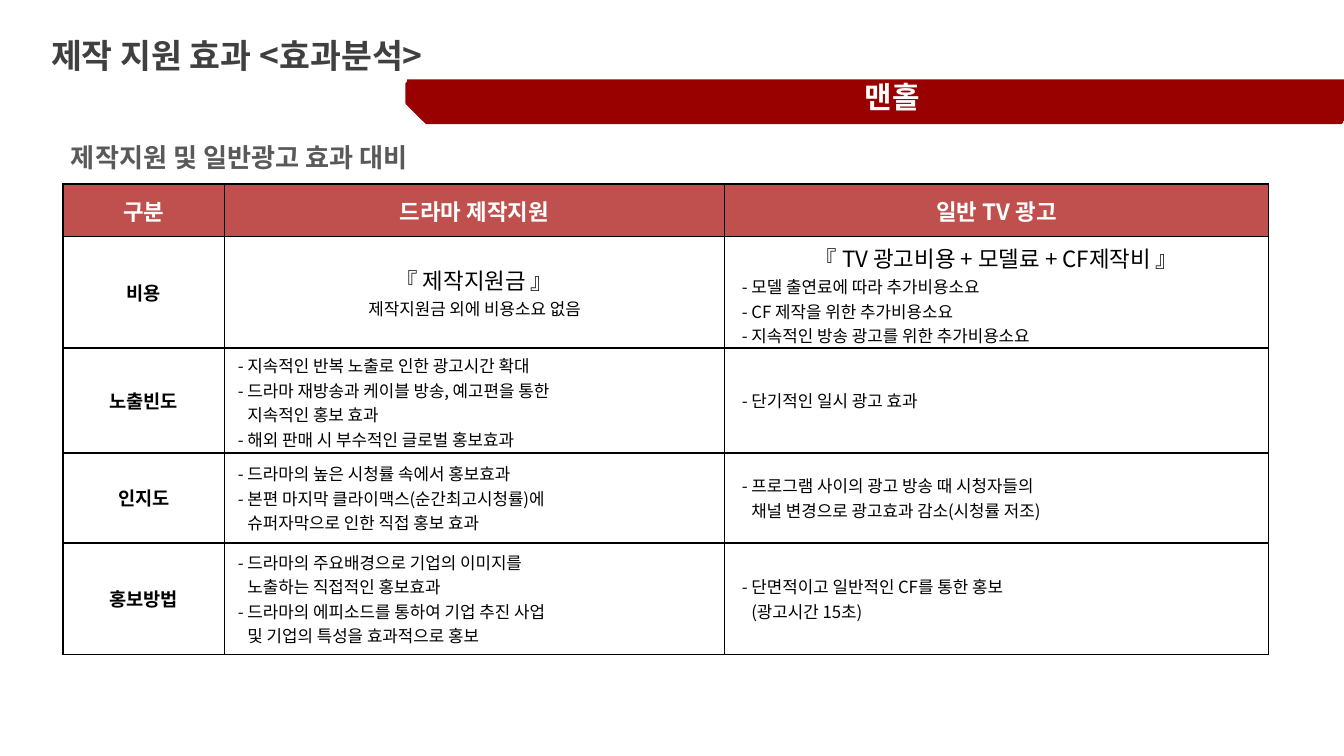
from dataclasses import dataclass

from lxml.etree import SubElement
from pptx import Presentation
from pptx.dml.color import RGBColor
from pptx.enum.shapes import MSO_SHAPE as Shape
from pptx.enum.text import MSO_ANCHOR as Anchor, MSO_AUTO_SIZE as AutoSize, PP_ALIGN as Align
from pptx.oxml import parse_xml
from pptx.oxml.ns import nsdecls, qn
from pptx.util import Inches, Pt


@dataclass(frozen=True)
class Theme:
    korean: str = "Noto Sans CJK KR"
    latin: str = "Arial"
    title: str = "404040"
    subtitle: str = "595959"
    banner: str = "990000"
    header: str = "C0504D"
    white: str = "FFFFFF"
    black: str = "000000"
    title_size: int = 18
    banner_size: int = 16
    subtitle_size: int = 14
    head_size: int = 12
    label_size: int = 10
    body_size: int = 9


theme = Theme()
deck = Presentation()
deck.slide_width, deck.slide_height = Inches(10), Inches(5.625)
slide = deck.slides.add_slide(deck.slide_layouts[5])


def area(left, top, width, height):
    """Turn percentages of the slide into lengths."""
    across, down = deck.slide_width / 100, deck.slide_height / 100
    return int(left * across), int(top * down), int(width * across), int(height * down)


def write(paragraph, text, size, color, bold=False, align=Align.LEFT, face=theme.korean):
    paragraph.alignment = align
    run = paragraph.add_run()
    run.text = text
    run.font.size, run.font.bold = Pt(size), bold
    run.font.color.rgb = RGBColor.from_string(color)
    run.font.name = face
    SubElement(run.font._element, qn("a:ea")).set("typeface", theme.korean)


# Banner: a bar with its lower left corner cut, over an outlined one
for place, outlined in (((30.3, 11.02, 69.5, 5.16), True), ((30.3, 10.49, 69.7, 5.51), False)):
    bar = slide.shapes.add_shape(Shape.SNIP_1_RECTANGLE, *area(*place))
    bar.shadow.inherit = False
    bar.rotation = 180
    bar.adjustments[0] = 0.5
    bar.fill.solid()
    bar.fill.fore_color.rgb = RGBColor.from_string(theme.banner)
    if outlined:
        bar.line.color.rgb = RGBColor.from_string(theme.banner)
        bar.line.width = Pt(2)
    else:
        bar.line.fill.background()

drama = slide.shapes.add_textbox(*area(31.4, 9.6, 71.4, 6.58)).text_frame
drama.word_wrap = True
drama.margin_right = Inches(0.24)
write(drama.paragraphs[0], "맨홀", theme.banner_size, theme.white, True, Align.CENTER)

# Title and subtitle
title = slide.shapes.title
title.left, title.top, title.width, title.height = area(2.8, 3.73, 52, 8.53)
title.text_frame.auto_size = AutoSize.NONE
title.text_frame.vertical_anchor = Anchor.TOP
write(title.text_frame.paragraphs[0], "제작 지원 효과 <효과분석>",
      theme.title_size, theme.title, True)

subtitle = slide.shapes.add_textbox(*area(4.3, 17.78, 30.3, 6.04)).text_frame
subtitle.word_wrap = False
write(subtitle.paragraphs[0], "제작지원 및 일반광고 효과 대비",
      theme.subtitle_size, theme.subtitle, True, face=theme.latin)

# Comparison: label, drama sponsorship, ordinary TV advertising
comparison = [
    (["구분"], ["드라마 제작지원"], ["일반 TV 광고"]),
    (["비용"],
     ["『 제작지원금 』", "제작지원금 외에 비용소요 없음"],
     ["『 TV 광고비용 + 모델료 + CF제작비 』", "- 모델 출연료에 따라 추가비용소요",
      "- CF 제작을 위한 추가비용소요", "- 지속적인 방송 광고를 위한 추가비용소요"]),
    (["노출빈도"],
     ["- 지속적인 반복 노출로 인한 광고시간 확대", "- 드라마 재방송과 케이블 방송, 예고편을 통한",
      "지속적인 홍보 효과", "- 해외 판매 시 부수적인 글로벌 홍보효과"],
     ["- 단기적인 일시 광고 효과"]),
    (["인지도"],
     ["- 드라마의 높은 시청률 속에서 홍보효과", "- 본편 마지막 클라이맥스(순간최고시청률)에",
      "슈퍼자막으로 인한 직접 홍보 효과"],
     ["- 프로그램 사이의 광고 방송 때 시청자들의", "채널 변경으로 광고효과 감소(시청률 저조)"]),
    (["홍보방법"],
     ["- 드라마의 주요배경으로 기업의 이미지를", "노출하는 직접적인 홍보효과",
      "- 드라마의 에피소드를 통하여 기업 추진 사업", "및 기업의 특성을 효과적으로 홍보"],
     ["- 단면적이고 일반적인 CF를 통한 홍보", "(광고시간 15초)"]),
]
column_shares = (12, 37.2, 40.5)
row_shares = (6.93, 14.76, 13.87, 11.91, 14.76)
table = slide.shapes.add_table(len(row_shares), len(column_shares),
                               *area(4.7, 24.36, sum(column_shares), sum(row_shares))).table
for column, share in zip(table.columns, column_shares):
    column.width = int(deck.slide_width * share / 100)
for row, share in zip(table.rows, row_shares):
    row.height = int(deck.slide_height * share / 100)

for r, entries in enumerate(comparison):
    for c, lines in enumerate(entries):
        cell = table.cell(r, c)
        cell.vertical_anchor = Anchor.MIDDLE
        cell.margin_top = cell.margin_bottom = Inches(0.04)
        cell.fill.solid()
        cell.fill.fore_color.rgb = RGBColor.from_string(theme.white if r else theme.header)
        for i, side in enumerate(("lnL", "lnR", "lnT", "lnB")):
            cell._tc.get_or_add_tcPr().insert(i, parse_xml(
                f'<a:{side} {nsdecls("a")} w="{Pt(1)}"><a:solidFill>'
                f'<a:srgbClr val="{theme.black}"/></a:solidFill></a:{side}>'))
        for i, line in enumerate(lines):
            paragraph = cell.text_frame.paragraphs[0] if i == 0 else cell.text_frame.add_paragraph()
            if r == 0:
                write(paragraph, line, theme.head_size, theme.white, True, Align.CENTER)
            elif c == 0:
                write(paragraph, line, theme.label_size, theme.black, True, Align.CENTER)
            elif r == 1 and (i == 0 or c == 1):
                size = theme.body_size if i else theme.head_size
                write(paragraph, line, size, theme.black, align=Align.CENTER)
            else:
                # Wrapped lines sit deeper than the dashes
                indent = (0.03 if c == 2 else 0) + (0 if line.startswith("-") else 0.07)
                write(paragraph, line, theme.body_size, theme.black)
                paragraph._p.get_or_add_pPr().set("marL", str(Inches(indent)))

deck.save("out.pptx")
